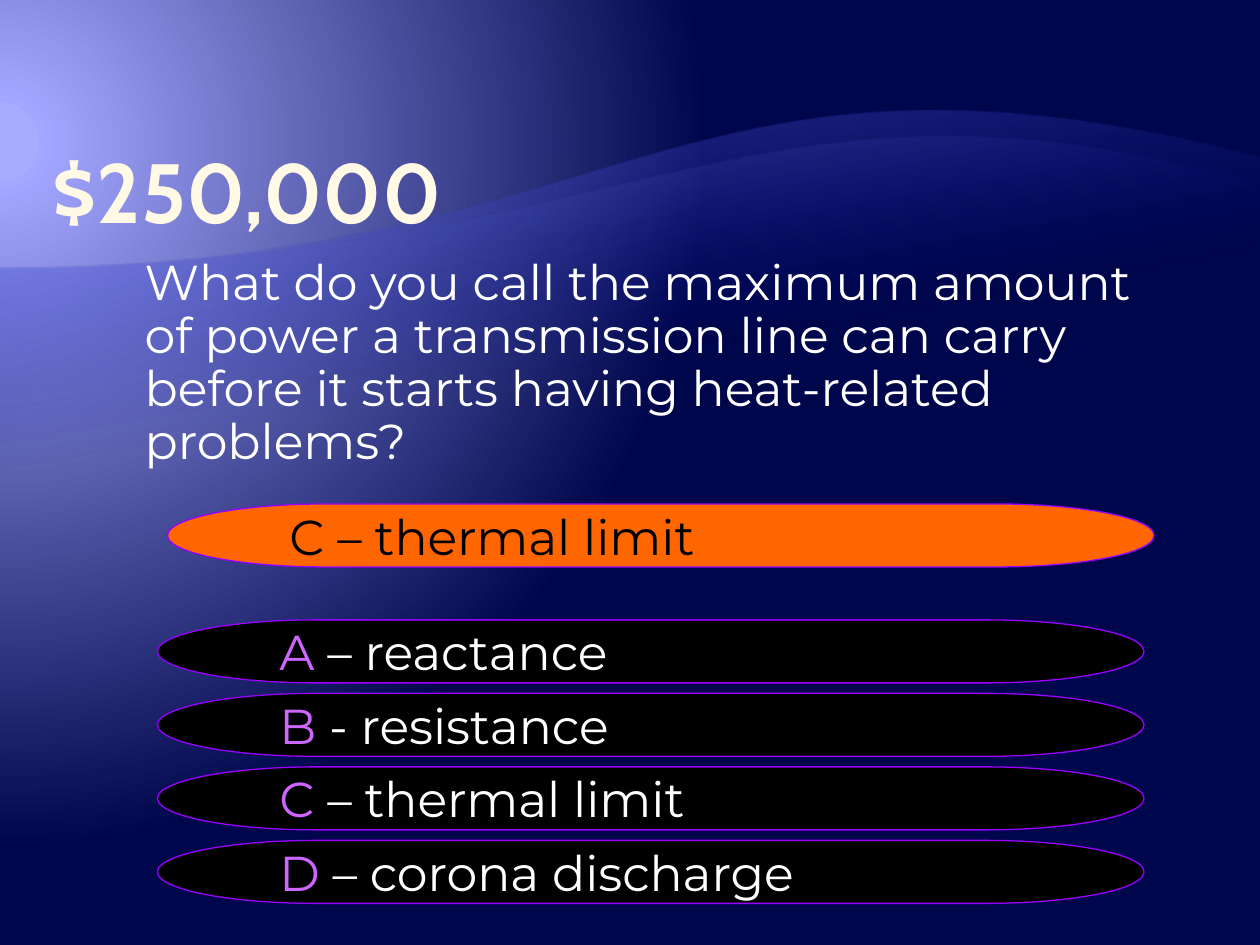
from lxml import etree
from pptx import Presentation
from pptx.dml.color import RGBColor
from pptx.enum.shapes import MSO_SHAPE
from pptx.enum.text import MSO_ANCHOR, PP_ALIGN
from pptx.oxml.ns import qn
from pptx.util import Inches, Pt

PILL = MSO_SHAPE.FLOWCHART_TERMINATOR
LEFT = PP_ALIGN.LEFT
MIDDLE, BOTTOM = MSO_ANCHOR.MIDDLE, MSO_ANCHOR.BOTTOM

CREAM = RGBColor(0xFF, 0xF9, 0xE5)
WHITE = RGBColor(0xFF, 0xFF, 0xFF)
BLACK = RGBColor(0, 0, 0)
ORANGE = RGBColor(0xFF, 0x66, 0x00)
VIOLET = RGBColor(0x99, 0x00, 0xFF)
LILAC = RGBColor(0xCC, 0x66, 0xFF)
NAVY = RGBColor(0x00, 0x06, 0x4B)
BLUE = RGBColor(0x00, 0x0D, 0x9E)
SKY = RGBColor(0x79, 0x7F, 0xFF)
PALE = RGBColor(0xA3, 0xA7, 0xFF)
GLOW = RGBColor(0xA8, 0xAC, 0xFF)

TITLE = "$250,000"
QUESTION = ("What do you call the maximum amount of power a transmission line "
            "can carry before it starts having heat-related problems?")
CHOICES = [("A ", "– reactance"), ("B ", "- resistance"),
           ("C ", "– thermal limit"), ("D ", "– corona discharge")]
ANSWER = "C – thermal limit"

W, H = 10, 7.5
PILL_W, PILL_H = 7.83, 0.5
CHOICE_X, CHOICE_Y, PITCH = 1.25, 4.92, 7 / 12
BG_STOPS = [(5, GLOW, 100), (5, PALE, 100), (90, NAVY, 100)]
BG_FOCUS = {"l": 20, "t": 30, "r": 135, "b": 100}
WAVES = [
    (7.33, [(0, 2.13), (5, 2.13), (5.34, 0.05), (10, 1.25)], SKY, 55),
    (6.37, [(0, 2.13), (5, 2.13), (5.98, 0.31), (10, 1.47)], PALE, 30),
]
WAVE_ANGLE = 260
STEPS = 60


def add(parent, tag, **attrs):
    return etree.SubElement(parent, qn(tag), {k: str(v) for k, v in attrs.items()})


def set_gradient(fill, owner, stops, angle=None, focus=None):
    fill.gradient()
    grad = next(owner.iter(qn("a:gradFill")))
    for child in list(grad):
        grad.remove(child)
    gs_list = add(grad, "a:gsLst")
    for pos, color, alpha in stops:
        gs = add(gs_list, "a:gs", pos=pos * 1000)
        add(add(gs, "a:srgbClr", val=color), "a:alpha", val=alpha * 1000)
    if focus:
        circle = add(grad, "a:path", path="circle")
        add(circle, "a:fillToRect", **{k: v * 1000 for k, v in focus.items()})
    else:
        add(grad, "a:lin", ang=angle * 60000, scaled=0)


def bezier(points, t):
    weights = ((1 - t) ** 3, 3 * t * (1 - t) ** 2, 3 * t * t * (1 - t), t ** 3)
    return tuple(Inches(sum(w * p[i] for w, p in zip(weights, points))) for i in (0, 1))


def add_wave(s, base, curve, color, alpha):
    points = [bezier(curve, i / STEPS) for i in range(STEPS + 1)]
    builder = s.shapes.build_freeform(Inches(0), Inches(base), scale=1)
    builder.add_line_segments(points + [(Inches(W), Inches(base))], close=True)
    sp = builder.convert_to_shape()
    sp.shadow.inherit = False
    sp.line.fill.background()
    set_gradient(sp.fill, sp._element.spPr, [(65, BLUE, 0), (100, color, alpha)], WAVE_ANGLE)
    return sp


def add_run(p, text, color, name="Montserrat", size=28, bold=False):
    r = p.add_run()
    r.text = text
    for key, value in {"name": name, "size": Pt(size), "bold": bold}.items():
        setattr(r.font, key, value)
    r.font.color.rgb = color


def indent(p, left):
    p.alignment = LEFT
    pPr = p._p.get_or_add_pPr()
    pPr.set("marL", str(Inches(left)))
    pPr.set("indent", "0")


def add_pill(s, x, y, fill, runs):
    sp = s.shapes.add_shape(PILL, *map(Inches, (x, y, PILL_W, PILL_H)))
    sp.shadow.inherit = False
    sp.fill.solid()
    sp.fill.fore_color.rgb = fill
    sp.line.color.rgb = VIOLET
    sp.line.width = Pt(0.75)
    tf = sp.text_frame
    tf.vertical_anchor = MIDDLE
    tf.word_wrap = True
    p = tf.paragraphs[0]
    indent(p, 0.5)
    for text, color in runs:
        add_run(p, text, color)


def main():
    prs = Presentation()
    prs.slide_width, prs.slide_height = Inches(W), Inches(H)
    s = prs.slides.add_slide(prs.slide_layouts[5])
    set_gradient(s.background.fill, s._element, BG_STOPS, focus=BG_FOCUS)

    for i, wave in enumerate(WAVES):
        sp = add_wave(s, *wave)
        s.shapes._spTree.insert(2 + i, sp._element)

    title = s.shapes.title
    box = {"left": 0.42, "top": 0.67, "width": 6.83, "height": 1.25}
    for key, value in box.items():
        setattr(title, key, Inches(value))
    tf = title.text_frame
    margins = {"margin_left": 0, "margin_right": 0, "margin_top": 0.01, "margin_bottom": 0.01}
    for key, value in margins.items():
        setattr(tf, key, Inches(value))
    tf.vertical_anchor = BOTTOM
    p = tf.paragraphs[0]
    p.alignment = LEFT
    add_run(p, TITLE, CREAM, "Cabin", 48, True)

    tf = s.shapes.add_textbox(*map(Inches, (0.67, 2, 8.5, 1.92))).text_frame
    tf.word_wrap = True
    p = tf.paragraphs[0]
    indent(p, 0.38)
    p.line_spacing = 0.9
    p.space_before = Pt(6)
    add_run(p, QUESTION, WHITE)

    for i, (letter, text) in enumerate(CHOICES):
        add_pill(s, CHOICE_X, CHOICE_Y + i * PITCH, BLACK, [(letter, LILAC), (text, WHITE)])
    add_pill(s, 1.33, 4, ORANGE, [(ANSWER, BLACK)])

    prs.save("out.pptx")


if __name__ == "__main__":
    main()
